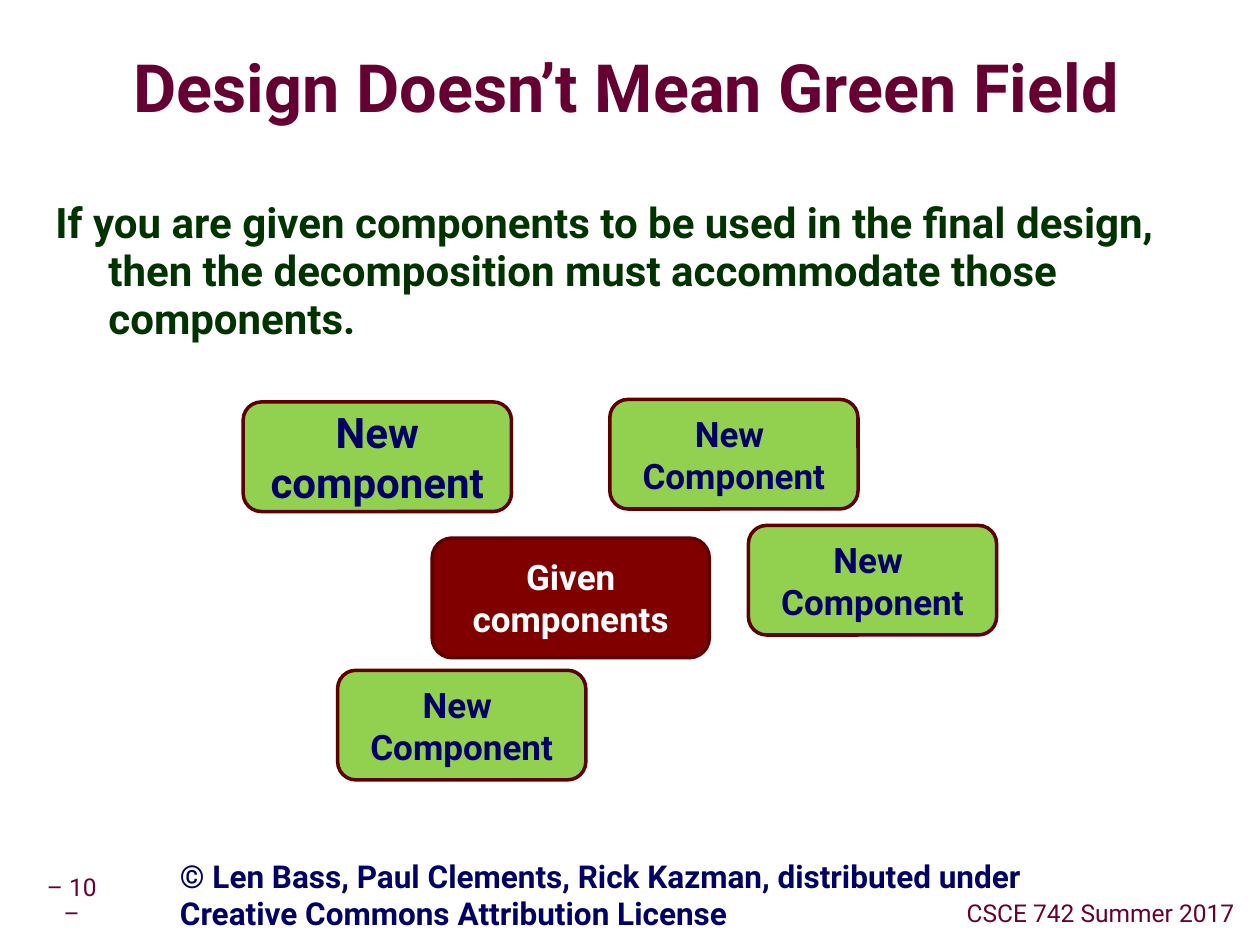
from dataclasses import dataclass
from lxml.etree import SubElement, Element
from pptx import Presentation
from pptx.dml.color import RGBColor
from pptx.enum.shapes import MSO_SHAPE
from pptx.enum.text import MSO_ANCHOR, MSO_AUTO_SIZE, PP_ALIGN
from pptx.oxml.ns import qn
from pptx.util import Inches, Pt


@dataclass(frozen=True)
class Theme:
    font: str = "Roboto"
    wine: str = "660033"
    green: str = "003300"
    navy: str = "000066"
    white: str = "FFFFFF"
    lime: str = "92D050"
    red: str = "800000"
    edge: str = "5F0000"
    shade: str = "999999"
    head: int = 38
    body: int = 24
    card: int = 20
    note: int = 18
    small: int = 14


THEME = Theme()


def tint(code):
    return RGBColor.from_string(code)


def place(shape, box):
    shape.left, shape.top, shape.width, shape.height = (Inches(n) for n in box)


def setup(frame, anchor, pad=(0.1, 0.05)):
    frame.word_wrap = True
    frame.auto_size = MSO_AUTO_SIZE.NONE
    frame.vertical_anchor = anchor
    frame.margin_left = frame.margin_right = Inches(pad[0])
    frame.margin_top = frame.margin_bottom = Inches(pad[1])


def write(para, text, size, color, bold=True, align=PP_ALIGN.LEFT, space=1.0):
    para.alignment = align
    para.line_spacing = space
    para.space_before = Pt(0)
    run = para.add_run()
    run.text = text
    font = run.font
    font.name, font.size, font.bold = THEME.font, Pt(size), bold
    font.color.rgb = tint(color)
    return run


def shade(run):
    fill = run.font._element.find(qn("a:solidFill"))
    group = Element(qn("a:effectLst"))
    drop = SubElement(group, qn("a:outerShdw"), dist="45000", dir="2700000")
    SubElement(drop, qn("a:srgbClr"), val=THEME.shade)
    fill.addnext(group)


def title(slide, box):
    shape = slide.shapes.title
    place(shape, box)
    setup(shape.text_frame, MSO_ANCHOR.MIDDLE, (0, 0))
    shade(write(shape.text_frame.paragraphs[0], "Design Doesn’t Mean Green Field",
                THEME.head, THEME.wine, space=0.87))


def body(slide, box):
    shape = slide.placeholders[1]
    place(shape, box)
    setup(shape.text_frame, MSO_ANCHOR.TOP)
    para = shape.text_frame.paragraphs[0]
    props = para._p.get_or_add_pPr()
    props.set("marL", str(Inches(0.42)))
    props.set("indent", str(Inches(-0.42)))
    SubElement(props, qn("a:buNone"))
    write(para, "If you are given components to be used in the final design, "
          "then the decomposition must accommodate those components.",
          THEME.body, THEME.green, space=0.95)


def card(slide, box, lines, size, fill, color):
    shape = slide.shapes.add_shape(MSO_SHAPE.ROUNDED_RECTANGLE, *(Inches(n) for n in box))
    shape.shadow.inherit = False
    shape.fill.solid()
    shape.fill.fore_color.rgb = tint(fill)
    shape.line.color.rgb = tint(THEME.edge)
    shape.line.width = Pt(2)
    frame = shape.text_frame
    setup(frame, MSO_ANCHOR.MIDDLE)
    for i, line in enumerate(lines):
        para = frame.add_paragraph() if i else frame.paragraphs[0]
        write(para, line, size, color, align=PP_ALIGN.CENTER)


def cards(slide, box):
    left, top = box[:2]
    card(slide, (left + 1.5, top + 1.1, 2.2, 0.95), ["Given components"],
         THEME.card, THEME.red, THEME.white)
    card(slide, (left, top + 0.02, 2.13, 0.87), ["New component"],
         THEME.body, THEME.lime, THEME.navy)
    for x, y in ((0.75, 2.15), (4.01, 1), (2.91, 0)):
        card(slide, (left + x, top + y, 1.97, 0.87), ["New ", "Component"],
             THEME.card, THEME.lime, THEME.navy)


def label(slide, box, text, size, color, anchor, pad, **style):
    shape = slide.shapes.add_textbox(*(Inches(n) for n in box))
    setup(shape.text_frame, anchor, pad)
    write(shape.text_frame.paragraphs[0], text, size, color, **style)


def footer(slide, box):
    left, top = box[:2]
    small = dict(bold=False, align=PP_ALIGN.CENTER, space=0.9)
    label(slide, (left, top + 0.25, 0.66, 0.31), "– 10 –", THEME.small,
          THEME.wine, MSO_ANCHOR.MIDDLE, (0.08, 0.05), **small)
    label(slide, (left + 7.34, top + 0.35, 2.31, 0.31), "CSCE 742 Summer 2017",
          THEME.small, THEME.wine, MSO_ANCHOR.MIDDLE, (0.05, 0.05), **small)
    label(slide, (left + 1.09, top, 6.93, 0.4),
          "© Len Bass, Paul Clements, Rick Kazman, distributed under "
          "Creative Commons Attribution License",
          THEME.note, THEME.navy, MSO_ANCHOR.TOP, (0.1, 0.05))


def main():
    deck = Presentation()
    deck.slide_width, deck.slide_height = Inches(10), Inches(7.5)
    slide = deck.slides.add_slide(deck.slide_layouts[1])
    title(slide, (1.06, 0.3, 8.58, 0.85))
    body(slide, (0.34, 1.54, 9, 5.31))
    footer(slide, (0.24, 6.75, 9.65, 0.66))
    cards(slide, (1.93, 3.17, 5.98, 3.02))
    deck.save("out.pptx")


if __name__ == "__main__":
    main()
